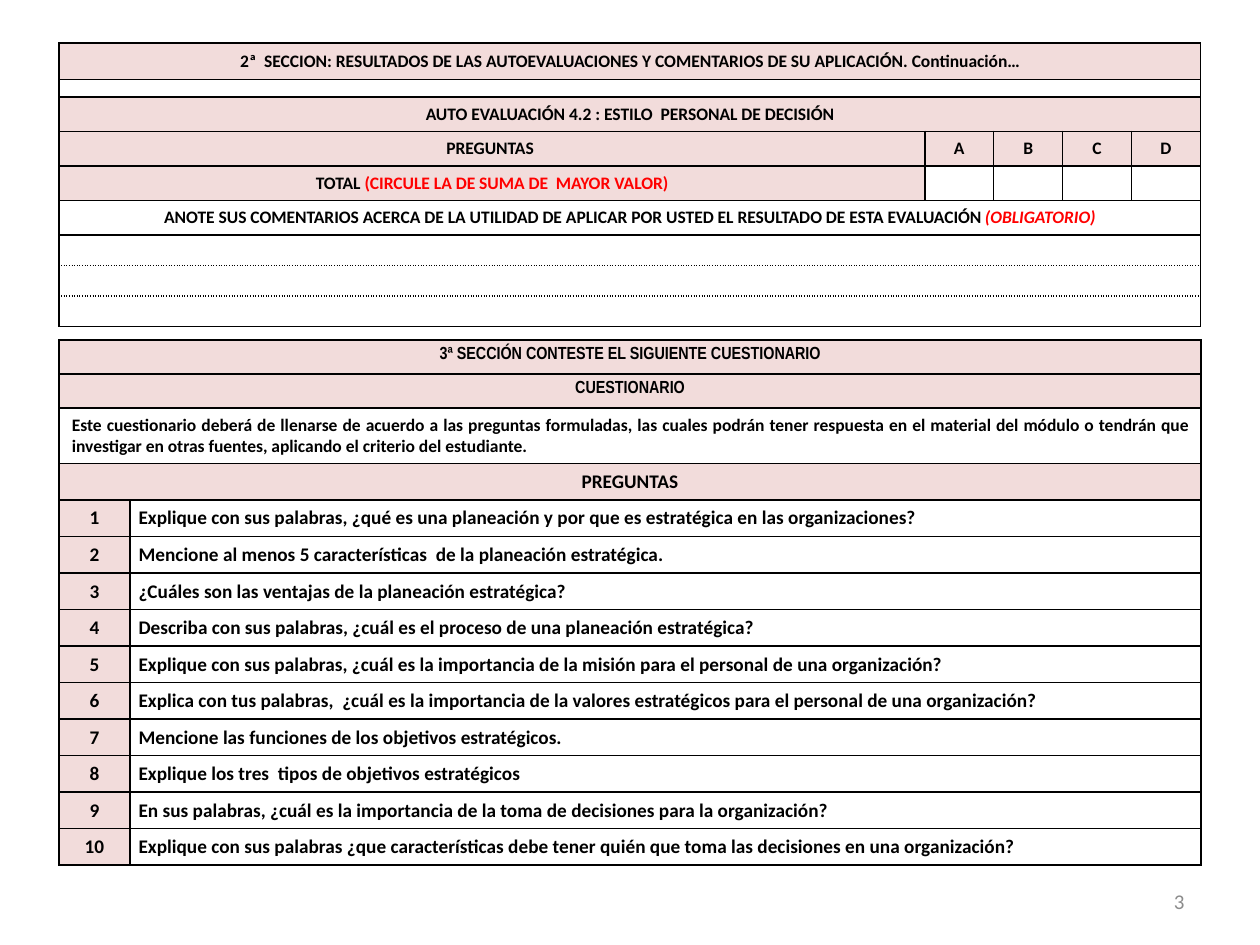
from lxml.etree import SubElement
from pptx import Presentation
from pptx.dml.color import RGBColor
from pptx.enum.text import MSO_ANCHOR, PP_ALIGN
from pptx.oxml.ns import qn
from pptx.util import Inches, Pt

INK = {"text": "000000", "alert": "FF0000", "head": "F2DCDB",
       "plain": "FFFFFF", "page": "8C8C8C"}
MID, JUST = PP_ALIGN.CENTER, PP_ALIGN.JUSTIFY
HEAD = {"fill": "head", "align": MID}
OPEN = {"fill": "plain", "align": MID}
NOTE = {"fill": "plain", "align": JUST}
SMALL = {"size": Pt(10)}
LARGE = {"size": Pt(11)}
SLIM = {"size": Pt(10), "name": "Arial Narrow"}
ASK = {"fill": "plain", "align": JUST, "pad": (0.7, 0.4)}


class Sheet:
    """Style and current slide; lengths count cells of a 100 by 75 grid."""

    base = {"name": "Calibri", "bold": True, "italic": False}

    def __init__(self, deck):
        self.slide = deck.slides.add_slide(deck.slide_layouts[6])
        self.unit = deck.slide_width / 100

    def span(self, count):
        return round(count * self.unit)

    def run(self, para, text, ink="text", **form):
        run = para.add_run()
        run.text = text
        for key, val in {**self.base, **form}.items():
            setattr(run.font, key, val)
        run.font.color.rgb = RGBColor.from_string(INK[ink])

    def label(self, text, box, align, **form):
        frame = self.slide.shapes.add_textbox(*map(self.span, box)).text_frame
        frame.word_wrap = True
        frame.vertical_anchor = MSO_ANCHOR.MIDDLE
        frame.paragraphs[0].alignment = align
        self.run(frame.paragraphs[0], text, **form)

    def table(self, left, top, cols, rows):
        box = map(self.span, (left, top, sum(cols), sum(rows)))
        grid = self.slide.shapes.add_table(len(rows), len(cols), *box).table
        grid.first_row = grid.horz_banding = False
        for col, size in zip(grid.columns, cols):
            col.width = self.span(size)
        for row, size in zip(grid.rows, rows):
            row.height = self.span(size)
        return grid

    def cell(self, cell, parts, fill, align, pad=(1.1, 0.5),
             anchor=MSO_ANCHOR.MIDDLE, dots="", **form):
        wide, high = map(self.span, pad if parts else (0, 0))
        look = {"margin_left": wide, "margin_right": wide, "margin_top": high,
                "margin_bottom": high, "vertical_anchor": anchor}
        for key, val in look.items():
            setattr(cell, key, val)
        cell.fill.solid()
        cell.fill.fore_color.rgb = RGBColor.from_string(INK[fill])
        para = cell.text_frame.paragraphs[0]
        para.alignment = align
        for text, extra in parts:
            self.run(para, text, **{**form, **extra})
        if not parts:  # keeps an empty row from growing
            SubElement(para._p, qn("a:endParaRPr"), sz="600")
        self.edge(cell, dots)

    def edge(self, cell, dots=""):
        props = cell._tc.get_or_add_tcPr()
        for spot, side in enumerate("LRTB"):
            line = SubElement(props, qn(f"a:ln{side}"), w=str(Pt(1)))
            fill = SubElement(line, qn("a:solidFill"))
            SubElement(fill, qn("a:srgbClr"), val=INK["text"])
            dash = "sysDot" if side in dots else "solid"
            SubElement(line, qn("a:prstDash"), val=dash)
            props.insert(spot, line)

    def band(self, grid, row, parts, **look):
        """Fill one row merged over all columns."""
        cells = list(grid.rows[row].cells)
        cells[0].merge(cells[-1])
        self.cell(cells[0], parts, **look)
        for cell in cells[1:]:
            self.edge(cell, look.get("dots", ""))


def rate(sheet):
    """Self-evaluation table."""
    grid = sheet.table(4.7, 3.4, [68.7] + [5.47] * 4,
                       [2.9, 1.4] + [2.74] * 4 + [2.42] * 3)
    bands = {
        0: ([("2ª  SECCION: RESULTADOS DE LAS AUTOEVALUACIONES Y COMENTARIOS "
              "DE SU APLICACIÓN. Continuación…", {})], HEAD),
        1: ([], OPEN),
        2: ([("AUTO EVALUACIÓN 4.2 : ESTILO  PERSONAL DE DECISIÓN", {})], HEAD),
        5: ([("ANOTE SUS COMENTARIOS ACERCA DE LA UTILIDAD DE APLICAR POR "
              "USTED EL RESULTADO DE ESTA EVALUACIÓN ", {}),
             ("(OBLIGATORIO)", {"ink": "alert", "italic": True})], OPEN),
        6: ([], {**OPEN, "dots": "B"}),
        7: ([], {**OPEN, "dots": "TB"}),
        8: ([], {**OPEN, "dots": "T"}),
    }
    for row, (parts, look) in bands.items():
        sheet.band(grid, row, parts, **look, **SMALL)

    # Score columns
    for col, text in enumerate(["PREGUNTAS ", *"ABCD"]):
        sheet.cell(grid.cell(3, col), [(text, {})], **HEAD, **SMALL)
    total = [("TOTAL ", {}),
             ("(CIRCULE LA DE SUMA DE  MAYOR VALOR)", {"ink": "alert"})]
    sheet.cell(grid.cell(4, 0), total, **HEAD, **SMALL)
    for col in range(1, 5):
        sheet.cell(grid.cell(4, col), [], **OPEN)


def quiz(sheet):
    """Questionnaire table."""
    asks = [
        "Explique con sus palabras, ¿qué es una planeación y por que es "
        "estratégica en las organizaciones?",
        "Mencione al menos 5 características  de la planeación estratégica.",
        "¿Cuáles son las ventajas de la planeación estratégica?",
        "Describa con sus palabras, ¿cuál es el proceso de una planeación "
        "estratégica?",
        "Explique con sus palabras, ¿cuál es la importancia de la misión para "
        "el personal de una organización?",
        "Explica con tus palabras,  ¿cuál es la importancia de la valores "
        "estratégicos para el personal de una organización?",
        "Mencione las funciones de los objetivos estratégicos.",
        "Explique los tres  tipos de objetivos estratégicos",
        "En sus palabras, ¿cuál es la importancia de la toma de decisiones "
        "para la organización?",
        "Explique con sus palabras ¿que características debe tener quién que "
        "toma las decisiones en una organización?",
    ]
    high = {"anchor": MSO_ANCHOR.TOP}
    bands = [
        ("3ª SECCIÓN CONTESTE EL SIGUIENTE CUESTIONARIO",
         {**HEAD, **SLIM, **high}),
        ("CUESTIONARIO", {**HEAD, **SLIM, **high}),
        ("Este cuestionario deberá de llenarse de acuerdo a las preguntas "
         "formuladas, las cuales podrán tener respuesta en el material del "
         "módulo o tendrán que investigar en otras fuentes, aplicando el "
         "criterio del estudiante.", {**NOTE, **SMALL, "pad": (1, 0.5)}),
        ("PREGUNTAS", {**HEAD, **LARGE}),
    ]
    grid = sheet.table(4.7, 27, [5.6, 85],
                       [2.7, 2.7, 4.4] + [2.9] * (len(asks) + 1))
    for row, (text, look) in enumerate(bands):
        sheet.band(grid, row, [(text, {})], **look)
    for num, text in enumerate(asks, 1):
        row = len(bands) + num - 1
        sheet.cell(grid.cell(row, 0), [(str(num), {})], **HEAD, **LARGE)
        sheet.cell(grid.cell(row, 1), [(text, {})], **ASK, **LARGE)


def main():
    deck = Presentation()
    deck.slide_width, deck.slide_height = Inches(10), Inches(7.5)
    sheet = Sheet(deck)
    rate(sheet)
    quiz(sheet)
    # Page number
    sheet.label("3", (71.7, 69.5, 23.3, 4), PP_ALIGN.RIGHT, ink="page",
                size=Pt(12), bold=False)
    deck.save("out.pptx")


if __name__ == "__main__":
    main()
